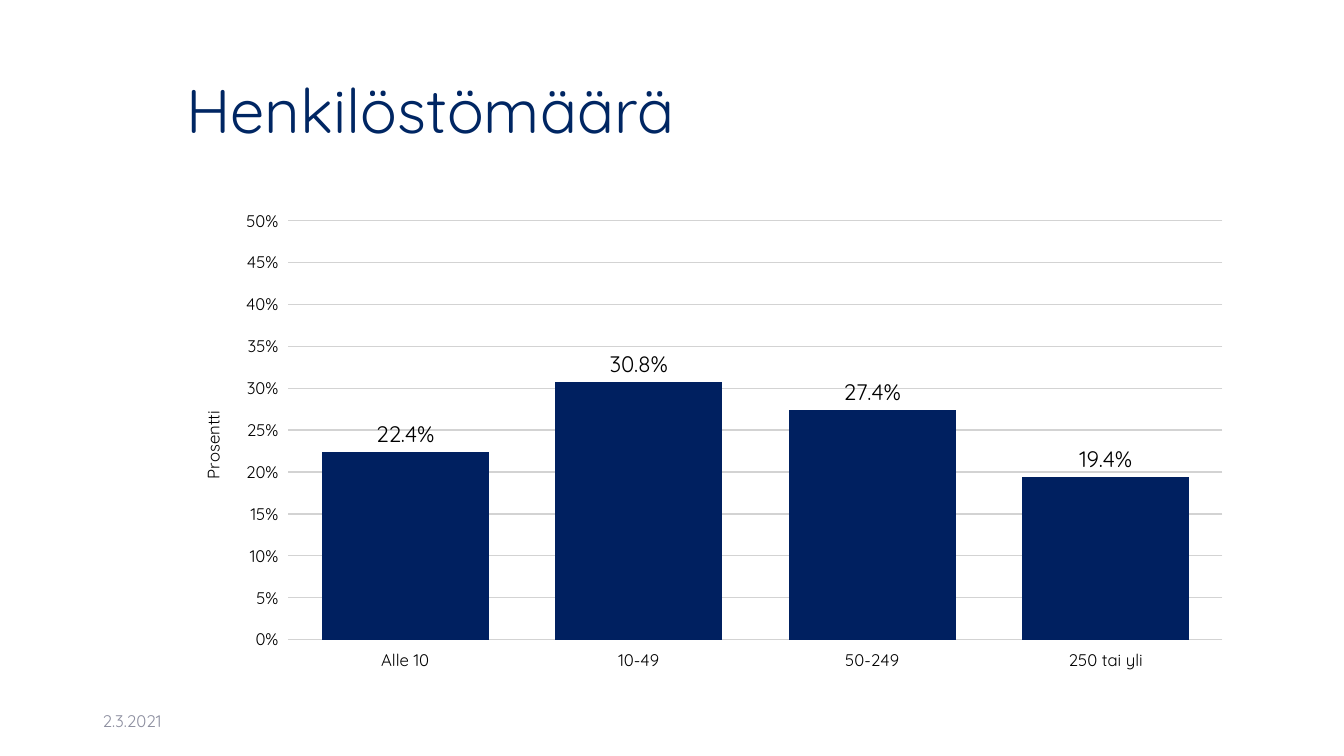
from lxml import etree
from pptx import Presentation
from pptx.chart.data import CategoryChartData
from pptx.dml.color import RGBColor
from pptx.enum.chart import XL_CHART_TYPE, XL_LABEL_POSITION, XL_TICK_MARK
from pptx.enum.text import MSO_ANCHOR
from pptx.oxml.ns import qn
from pptx.util import Pt

COLUMNS = XL_CHART_TYPE.COLUMN_CLUSTERED
OUTSIDE_END = XL_LABEL_POSITION.OUTSIDE_END
TICK_OUT = XL_TICK_MARK.OUTSIDE
MIDDLE = MSO_ANCHOR.MIDDLE

FONT = "Quicksand"
TITLE_BLUE = RGBColor(0x00, 0x26, 0x63)
BAR_BLUE = RGBColor(0x00, 0x20, 0x60)
DATE_GREY = RGBColor(0x8C, 0x8E, 0x9F)
GRID_GREY = RGBColor(0xD3, 0xD3, 0xD3)
BLACK = RGBColor(0, 0, 0)
WHITE = RGBColor(0xFF, 0xFF, 0xFF)

STAFF_SHARES = {"Alle 10": 0.224, "10-49": 0.308, "50-249": 0.274, "250 tai yli": 0.194}


def style_font(font, size, color=BLACK):
    font.name = FONT
    font.size = Pt(size)
    font.bold = False
    font.color.rgb = color


def add_text(s, text, left, top, width, height, size, color):
    tf = s.shapes.add_textbox(Pt(left), Pt(top), Pt(width), Pt(height)).text_frame
    tf.word_wrap = True
    tf.vertical_anchor = MIDDLE
    p = tf.paragraphs[0]
    p.text = text
    style_font(p.font, size, color)
    return p


def place(parent, **position):
    """Give a chart part a manual layout, in fractions of the chart area."""
    layout = parent.find(qn("c:layout"))
    if layout is None:
        layout = etree.Element(qn("c:layout"))
        parent.insert(0, layout)
    manual = etree.SubElement(layout, qn("c:manualLayout"))
    if "w" in position:
        etree.SubElement(manual, qn("c:layoutTarget")).set("val", "inner")
    for mode in ("xMode", "yMode"):
        etree.SubElement(manual, qn(f"c:{mode}")).set("val", "edge")
    for key, value in position.items():
        etree.SubElement(manual, qn(f"c:{key}")).set("val", str(value))


def style_axis(axis):
    axis.major_tick_mark = TICK_OUT
    axis.format.line.fill.background()
    style_font(axis.tick_labels.font, 12)


def style_value_axis(axis):
    style_axis(axis)
    axis.minimum_scale = 0
    axis.maximum_scale = 0.5
    axis.major_unit = 0.05
    axis.tick_labels.number_format = "0%"
    axis.tick_labels.number_format_is_linked = False
    grid = axis.major_gridlines.format.line
    grid.color.rgb = GRID_GREY
    grid.width = Pt(1)
    title = axis.axis_title
    p = title.text_frame.paragraphs[0]
    p.text = "Prosentti"
    style_font(p.font, 12)
    place(title._element, x=0.02, y=0.43)


def style_bars(plot):
    plot.gap_width = 40
    plot.vary_by_categories = False
    fill = plot.series[0].format.fill
    fill.solid()
    fill.fore_color.rgb = BAR_BLUE
    plot.has_data_labels = True
    labels = plot.data_labels
    labels.show_value = True
    labels.position = OUTSIDE_END
    labels.number_format = "0.0%"
    labels.number_format_is_linked = False
    style_font(labels.font, 16)


def add_column_chart(s, shares, left, top, width, height):
    data = CategoryChartData()
    data.categories = list(shares)
    data.add_series("Series 1", list(shares.values()))
    frame = s.shapes.add_chart(COLUMNS, Pt(left), Pt(top), Pt(width), Pt(height), data)
    chart = frame.chart
    chart.has_legend = False
    chart.has_title = False
    style_font(chart.font, 11)
    style_axis(chart.category_axis)
    style_value_axis(chart.value_axis)
    style_bars(chart.plots[0])
    place(chart._chartSpace.chart.plotArea, x=0.105, y=0.04, w=0.875, h=0.873)


def main():
    prs = Presentation()
    prs.slide_width, prs.slide_height = Pt(960), Pt(540)
    s = prs.slides.add_slide(prs.slide_layouts[6])
    s.background.fill.solid()
    s.background.fill.fore_color.rgb = WHITE
    title = add_text(s, "Henkilöstömäärä", 126, 28.8, 762.5, 104.4, 44, TITLE_BLUE)
    title.line_spacing = 0.9
    add_column_chart(s, STAFF_SHARES, 126, 144, 762.5, 342.7)
    add_text(s, "2.3.2021", 66.2, 500.4, 216, 28.8, 12, DATE_GREY)
    prs.save("out.pptx")


if __name__ == "__main__":
    main()
